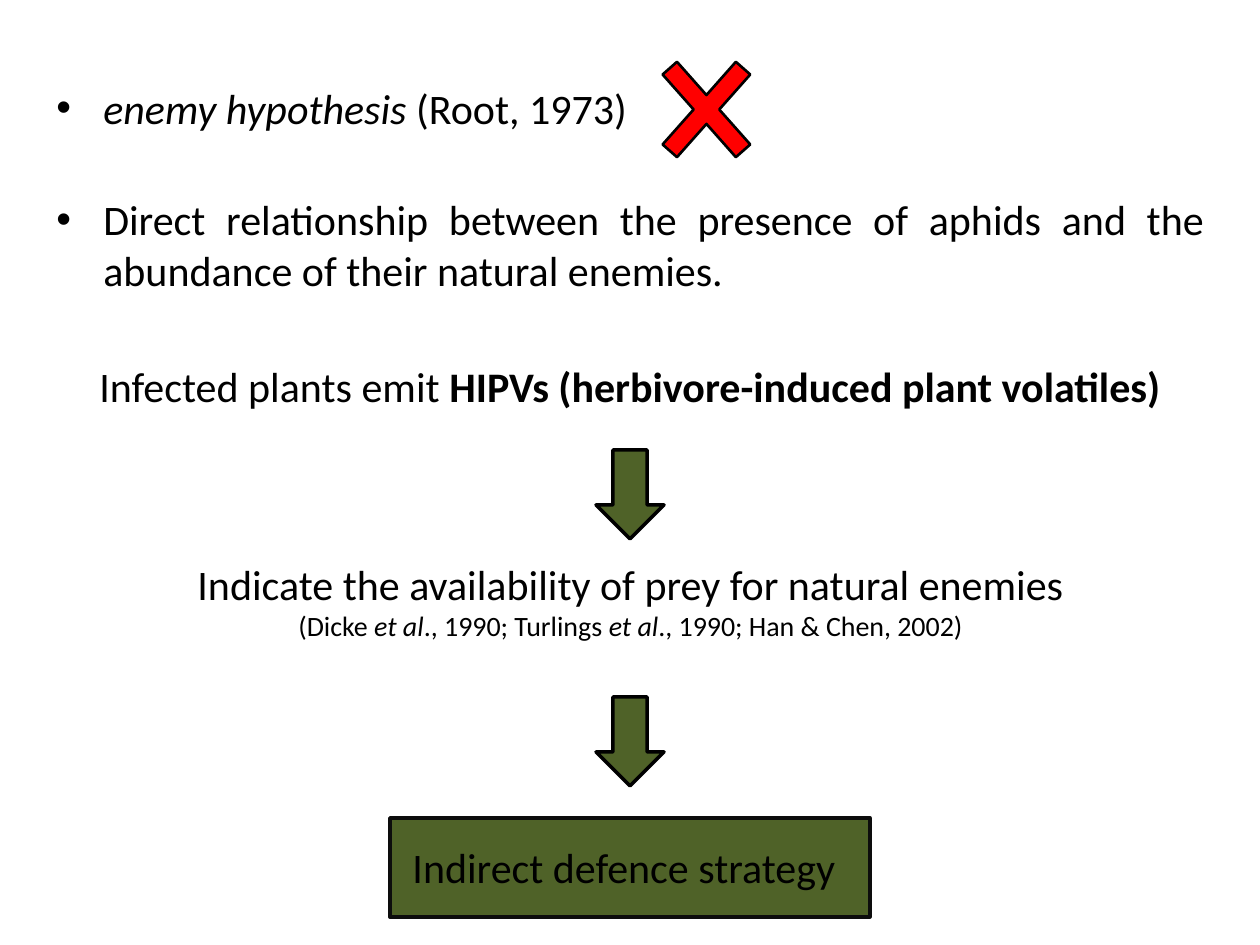
from dataclasses import dataclass

from lxml.etree import SubElement
from pptx import Presentation
from pptx.dml.color import RGBColor
from pptx.enum.shapes import MSO_SHAPE
from pptx.enum.text import MSO_ANCHOR, PP_ALIGN
from pptx.oxml.ns import qn
from pptx.util import Emu, Pt

EMU_PER_PX = 914400 / 126
COLORS = {"black": "000000", "near_black": "0D0D0D", "red": "FF0000", "green": "4F6228"}
FONT = "Calibri"
BULLET_INDENT = 47


@dataclass(frozen=True)
class Box:
    left: int
    top: int
    width: int
    height: int

    def emu(self) -> list[Emu]:
        return [px(value) for value in (self.left, self.top, self.width, self.height)]


@dataclass(frozen=True)
class Run:
    text: str
    bold: bool = False
    italic: bool = False


@dataclass(frozen=True)
class Line:
    runs: tuple[Run, ...]
    size: int = 24
    bullet: bool = False
    space_before: int = 0


@dataclass(frozen=True)
class Figure:
    preset: MSO_SHAPE
    box: Box
    fill: str
    outline: str = "black"
    outline_width: float = 2
    adjustment: float | None = None


@dataclass(frozen=True)
class TextBlock:
    box: Box
    lines: tuple[Line, ...]
    wrap: bool = True


def px(value: int) -> Emu:
    return Emu(round(value * EMU_PER_PX))


def color(name: str) -> RGBColor:
    return RGBColor.from_string(COLORS[name])


def draw_figure(shapes, figure: Figure) -> None:
    shape = shapes.add_shape(figure.preset, *figure.box.emu())
    shape.shadow.inherit = False
    if figure.adjustment is not None:
        shape.adjustments[0] = figure.adjustment
    shape.fill.solid()
    shape.fill.fore_color.rgb = color(figure.fill)
    shape.line.color.rgb = color(figure.outline)
    shape.line.width = Pt(figure.outline_width)


def add_bullet(paragraph) -> None:
    """Give the paragraph a round bullet with a hanging indent."""
    properties = paragraph._p.get_or_add_pPr()
    properties.set("marL", str(px(BULLET_INDENT)))
    properties.set("indent", str(-px(BULLET_INDENT)))
    SubElement(properties, qn("a:buFont"), typeface="Arial")
    SubElement(properties, qn("a:buChar"), char="•")


def draw_text(shapes, block: TextBlock) -> None:
    frame = shapes.add_textbox(*block.box.emu()).text_frame
    frame.word_wrap = block.wrap
    frame.vertical_anchor = MSO_ANCHOR.TOP
    for index, line in enumerate(block.lines):
        paragraph = frame.add_paragraph() if index else frame.paragraphs[0]
        paragraph.alignment = PP_ALIGN.JUSTIFY if line.bullet else PP_ALIGN.CENTER
        paragraph.space_before = Pt(line.space_before)
        if line.bullet:
            add_bullet(paragraph)
        for part in line.runs:
            run = paragraph.add_run()
            run.text = part.text
            run.font.color.rgb = color("black")
            formats = {"name": FONT, "size": Pt(line.size), "bold": part.bold, "italic": part.italic}
            for attribute, value in formats.items():
                setattr(run.font, attribute, value)


FINDINGS = TextBlock(Box(44, 76, 1173, 764), (
    Line((Run("enemy hypothesis ", italic=True), Run("(Root, 1973)")), bullet=True),
    Line((Run("Direct relationship between the presence of aphids and the "
              "abundance of their natural enemies."),), bullet=True, space_before=35),
))
REJECTED_CROSS = Figure(MSO_SHAPE.MATH_MULTIPLY, Box(636, 30, 141, 159), "red",
                        outline_width=1.5, adjustment=0.136)
ARROWS = [Figure(MSO_SHAPE.DOWN_ARROW, Box(596, top, 68, 89), "green") for top in (450, 697)]
STRATEGY_PANEL = Figure(MSO_SHAPE.RECTANGLE, Box(390, 818, 480, 99), "green", "near_black")
STRATEGY_LABEL = TextBlock(Box(393, 835, 462, 63),
                           (Line((Run("Indirect defence strategy"),)),), wrap=False)
VOLATILES = TextBlock(Box(15, 354, 1230, 115), (
    Line((Run("Infected plants emit "),
          Run("HIPVs (herbivore-induced plant volatiles)", bold=True))),
))
PREY_SIGNAL = TextBlock(Box(92, 552, 1077, 97), (
    Line((Run("Indicate the availability of prey for natural enemies"),)),
    Line((Run("(Dicke "), Run("et al", italic=True), Run("., 1990; Turlings "),
          Run("et al", italic=True), Run("., 1990; Han & Chen, 2002)")), size=16),
))


def main() -> None:
    presentation = Presentation()
    presentation.slide_width = px(1260)
    presentation.slide_height = px(945)
    slide = presentation.slides.add_slide(presentation.slide_layouts[6])

    draw_text(slide.shapes, FINDINGS)
    for figure in (REJECTED_CROSS, *ARROWS):
        draw_figure(slide.shapes, figure)
    strategy = slide.shapes.add_group_shape()
    draw_figure(strategy.shapes, STRATEGY_PANEL)
    draw_text(strategy.shapes, STRATEGY_LABEL)
    for block in (PREY_SIGNAL, VOLATILES):
        draw_text(slide.shapes, block)

    presentation.save("out.pptx")


if __name__ == "__main__":
    main()
